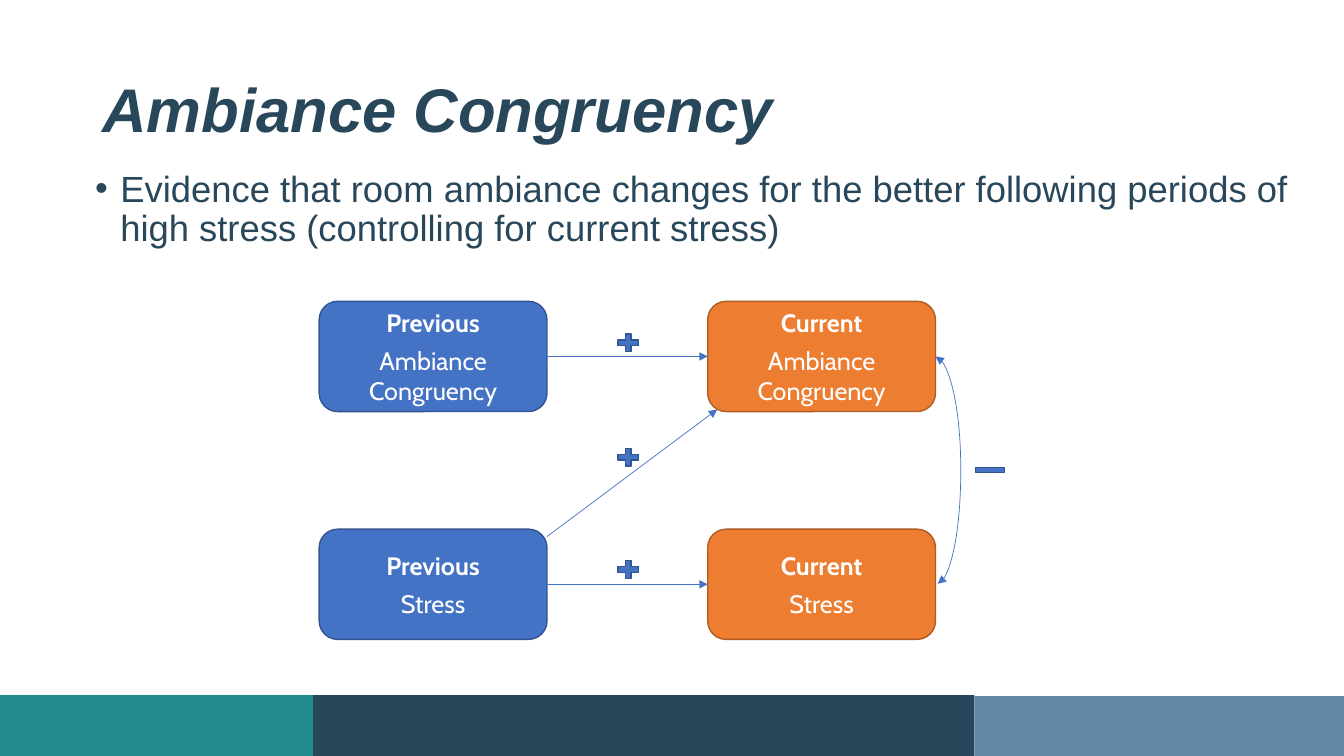
from dataclasses import dataclass

from lxml import etree
from pptx import Presentation
from pptx import util as u
from pptx.dml.color import RGBColor
from pptx.enum import shapes, text
from pptx.oxml import ns

PX = 9525
BOX_SIZE = (217, 105)
COLUMN_LEFTS = (304, 674)
ROW_TOPS = (287, 504)


@dataclass(frozen=True)
class Theme:
    """Colours, fonts and type sizes of the slide."""
    ink: str = "29475B"
    teal: str = "218B8B"
    steel: str = "6289A7"
    blue: str = "4472C4"
    blue_edge: str = "325491"
    orange: str = "ED7D31"
    orange_edge: str = "AF5C24"
    white: str = "FFFFFF"
    heading_font: str = "Arial"
    box_font: str = "Cabin"
    title_size: int = 44
    body_size: int = 26
    box_size: int = 18


THEME = Theme()


def px(*values):
    """Turn pixels into EMU lengths."""
    return [u.Emu(value * PX) for value in values]


def style_font(font, name, size, color, bold=False, italic=False):
    """Set the look of a font."""
    font.name, font.size = name, u.Pt(size)
    font.bold, font.italic = bold, italic
    font.color.rgb = RGBColor.from_string(color)


def add_block(page, kind, frame, fill, edge=None):
    """Add a filled preset shape, outlined if an edge colour is given."""
    block = page.shapes.add_shape(kind, *px(*frame))
    block.shadow.inherit = False
    block.fill.solid()
    block.fill.fore_color.rgb = RGBColor.from_string(fill)
    if edge:
        block.line.color.rgb = RGBColor.from_string(edge)
        block.line.width = u.Pt(1)
    else:
        block.line.fill.background()
    return block


def add_variable(page, left, top, period, name, fill, edge):
    """Add a rounded box with a bold period above a variable name."""
    kind = shapes.MSO_SHAPE.ROUNDED_RECTANGLE
    box = add_block(page, kind, (left, top, *BOX_SIZE), fill, edge)
    frame = box.text_frame
    frame.word_wrap = True
    frame.vertical_anchor = text.MSO_ANCHOR.MIDDLE
    frame.text = f"{period}\n{name}"
    for paragraph, bold in zip(frame.paragraphs, (True, False)):
        paragraph.alignment = text.PP_ALIGN.CENTER
        style_font(paragraph.runs[0].font, THEME.box_font, THEME.box_size, THEME.white, bold)
    frame.paragraphs[1].space_before = u.Pt(6)
    return box


def add_arrow(page, kind, points, ends=("tailEnd",)):
    """Add a thin connector with triangles at the named ends."""
    arrow = page.shapes.add_connector(kind, *px(*points))
    arrow.line.color.rgb = RGBColor.from_string(THEME.blue)
    arrow.line.width = u.Pt(0.5)
    for end in ends:
        etree.SubElement(arrow.line._get_or_add_ln(), ns.qn(f"a:{end}"), type="triangle")
    etree.SubElement(arrow._element.spPr, ns.qn("a:effectLst"))
    return arrow


def bend(arrow, ratio):
    """Set how far a curved connector bulges, as a multiple of its width."""
    geometry = arrow._element.spPr.find(ns.qn("a:prstGeom"))
    guides = geometry.find(ns.qn("a:avLst"))
    if guides is None:
        guides = etree.SubElement(geometry, ns.qn("a:avLst"))
    etree.SubElement(guides, ns.qn("a:gd"), name="adj1", fmla=f"val {ratio * 100000}")


def fill_placeholder(holder, frame, words, anchor):
    """Place a placeholder and write its single paragraph."""
    holder.left, holder.top, holder.width, holder.height = px(*frame)
    holder.text_frame.text = words
    holder.text_frame.word_wrap = True
    holder.text_frame.auto_size = text.MSO_AUTO_SIZE.NONE
    holder.text_frame.vertical_anchor = anchor
    paragraph = holder.text_frame.paragraphs[0]
    paragraph.alignment = text.PP_ALIGN.LEFT
    paragraph.line_spacing = 0.9
    paragraph.space_before = u.Pt(0)
    return paragraph


def add_bullet(paragraph, indent):
    """Give a paragraph a hanging round bullet."""
    properties = paragraph._p.get_or_add_pPr()
    properties.set("marL", str(indent * PX))
    properties.set("indent", str(-indent * PX))
    etree.SubElement(properties, ns.qn("a:buFont"), typeface=THEME.heading_font)
    etree.SubElement(properties, ns.qn("a:buChar"), char="•")


def add_bands(page):
    """Add the coloured footer bands."""
    for left, top, width, fill in ((282, 662, 646, THEME.ink), (0, 662, 298, THEME.teal),
                                   (928, 663, 352, THEME.steel)):
        add_block(page, shapes.MSO_SHAPE.RECTANGLE, (left, top, width, 65), fill)


def add_heading(page):
    """Write the title and the bullet."""
    title = fill_placeholder(page.shapes.title, (88, 38, 1104, 139),
                             "Ambiance Congruency", text.MSO_ANCHOR.MIDDLE)
    style_font(title.runs[0].font, THEME.heading_font, THEME.title_size, THEME.ink, True, True)
    body = fill_placeholder(
        page.placeholders[1], (81, 158, 1186, 92),
        "Evidence that room ambiance changes for the better following periods of "
        "high stress (controlling for current stress)", text.MSO_ANCHOR.TOP)
    add_bullet(body, 24)
    style_font(body.runs[0].font, THEME.heading_font, THEME.body_size, THEME.ink)


def add_diagram(page):
    """Draw the variables, their paths and the path signs."""
    columns = (("Previous", THEME.blue, THEME.blue_edge),
               ("Current", THEME.orange, THEME.orange_edge))
    rows = ("Ambiance Congruency", "Stress")
    boxes = [[add_variable(page, left, top, period, name, fill, edge)
              for top, name in zip(ROW_TOPS, rows)]
             for left, (period, fill, edge) in zip(COLUMN_LEFTS, columns)]

    straight = shapes.MSO_CONNECTOR.STRAIGHT
    for previous, current in zip(*boxes):
        arrow = add_arrow(page, straight, (0, 0, 0, 0))
        arrow.begin_connect(previous, 3)
        arrow.end_connect(current, 1)
    add_arrow(page, straight, (521, 511, 683, 390))

    feedback = add_arrow(page, shapes.MSO_CONNECTOR.CURVE, (891, 339, 893, 556),
                         ("headEnd", "tailEnd"))
    feedback.begin_connect(boxes[1][0], 3)
    bend(feedback, 12)

    for top in (315, 424, 531):
        add_block(page, shapes.MSO_SHAPE.MATH_PLUS, (585, top, 27, 23),
                  THEME.blue, THEME.blue_edge)
    add_block(page, shapes.MSO_SHAPE.MATH_MINUS, (924, 438, 38, 19),
              THEME.blue, THEME.blue_edge)


def main():
    """Build and save the slide."""
    deck = Presentation()
    deck.slide_width, deck.slide_height = px(1280, 720)
    page = deck.slides.add_slide(deck.slide_layouts[1])
    add_bands(page)
    add_heading(page)
    add_diagram(page)
    deck.save("out.pptx")


if __name__ == "__main__":
    main()
